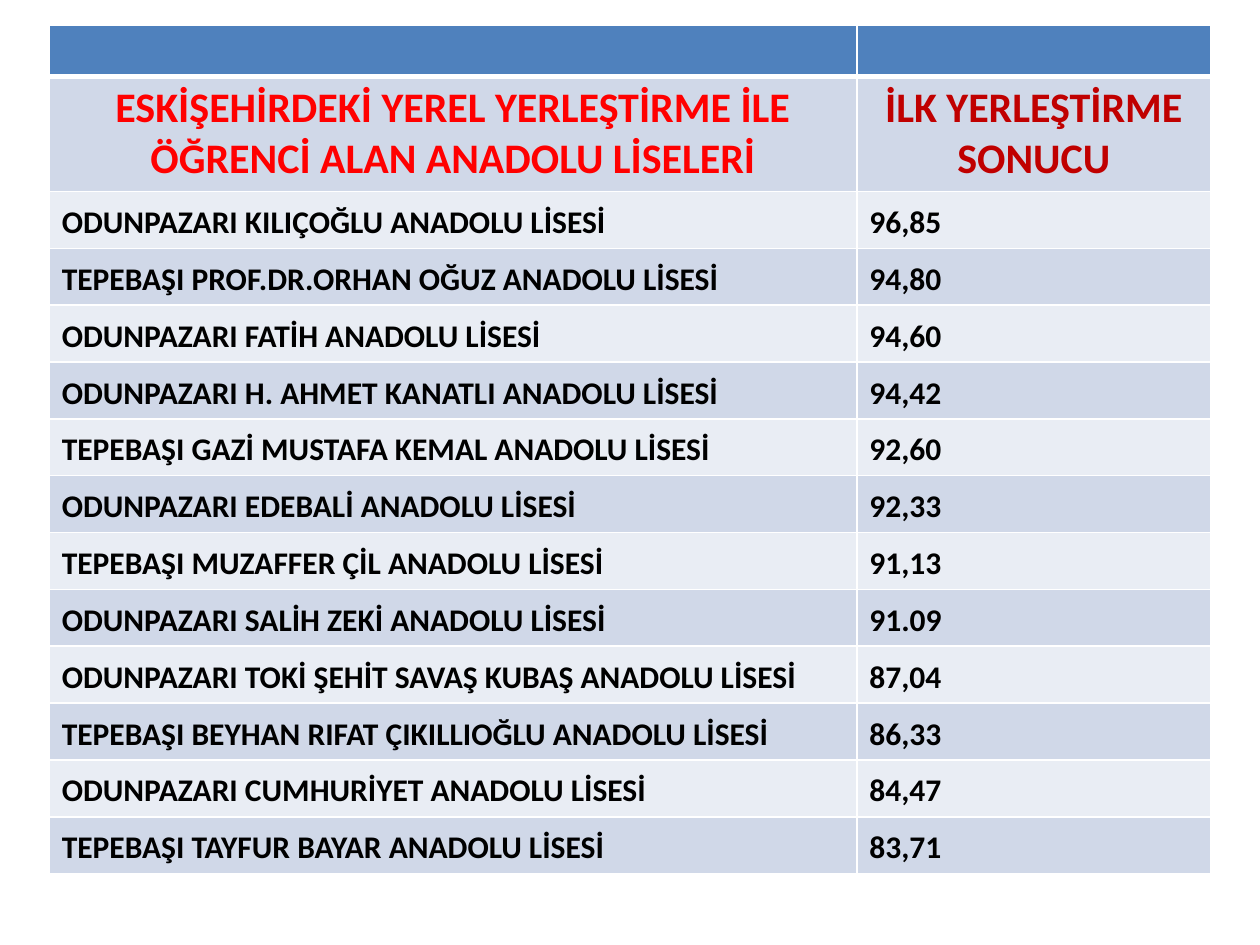
from lxml.etree import SubElement
from pptx import Presentation
from pptx.dml.color import RGBColor
from pptx.enum.text import PP_ALIGN as Align
from pptx.oxml.ns import qn
from pptx.util import Inches, Pt

HEADINGS = [
    ("ESKİŞEHİRDEKİ YEREL YERLEŞTİRME İLE ÖĞRENCİ ALAN ANADOLU LİSELERİ", "FF0000"),
    ("İLK YERLEŞTİRME SONUCU", "C00000"),
]
SCHOOLS = [
    ("ODUNPAZARI KILIÇOĞLU ANADOLU LİSESİ", "96,85"),
    ("TEPEBAŞI PROF.DR.ORHAN OĞUZ ANADOLU LİSESİ", "94,80"),
    ("ODUNPAZARI FATİH ANADOLU LİSESİ", "94,60"),
    ("ODUNPAZARI H. AHMET KANATLI ANADOLU LİSESİ", "94,42"),
    ("TEPEBAŞI GAZİ MUSTAFA KEMAL ANADOLU LİSESİ", "92,60"),
    ("ODUNPAZARI EDEBALİ ANADOLU LİSESİ", "92,33"),
    ("TEPEBAŞI MUZAFFER ÇİL ANADOLU LİSESİ", "91,13"),
    ("ODUNPAZARI SALİH ZEKİ ANADOLU LİSESİ", "91.09"),
    ("ODUNPAZARI TOKİ ŞEHİT SAVAŞ KUBAŞ ANADOLU LİSESİ", "87,04"),
    ("TEPEBAŞI BEYHAN RIFAT ÇIKILLIOĞLU ANADOLU LİSESİ", "86,33"),
    ("ODUNPAZARI CUMHURİYET ANADOLU LİSESİ", "84,47"),
    ("TEPEBAŞI TAYFUR BAYAR ANADOLU LİSESİ", "83,71"),
]
BANNER, BANDS = "4F81BD", ("E9EDF4", "D0D8E8")
LEFT, TOP = 0.39, 0.2
COLUMNS = [6.41, 2.81]
ROWS = [0.4, 0.91] + [0.45] * len(SCHOOLS)


def color(code):
    return RGBColor.from_string(code)


def style_cell(cell, fill, bottom=1):
    props = cell._tc.get_or_add_tcPr()
    for side, width in (("L", 1), ("R", 1), ("T", 1), ("B", bottom)):
        line = SubElement(props, qn(f"a:ln{side}"), w=str(Pt(width)))
        SubElement(SubElement(line, qn("a:solidFill")), qn("a:srgbClr"), val="FFFFFF")
    cell.fill.solid()
    cell.fill.fore_color.rgb = color(fill)


def write(cell, text, size, code):
    para = cell.text_frame.paragraphs[0]
    para.text = text
    font = para.font
    font.name, font.size, font.bold = "Calibri", Pt(size), True
    font.color.rgb = color(code)
    return para


deck = Presentation()
deck.slide_width, deck.slide_height = Inches(10), Inches(7.5)
page = deck.slides.add_slide(deck.slide_layouts[6])
table = page.shapes.add_table(
    len(ROWS), len(COLUMNS), Inches(LEFT), Inches(TOP),
    Inches(sum(COLUMNS)), Inches(sum(ROWS))).table
for column, width in zip(table.columns, COLUMNS):
    column.width = Inches(width)
for index, height in enumerate(ROWS):
    table.rows[index].height = Inches(height)
    for cell in table.rows[index].cells:
        if index == 0:
            style_cell(cell, BANNER, bottom=3)
        else:
            style_cell(cell, BANDS[index % 2])

for column, (heading, code) in enumerate(HEADINGS):
    write(table.cell(1, column), heading, 24, code).alignment = Align.CENTER
for row, school in enumerate(SCHOOLS, start=2):
    for column, text in enumerate(school):
        para = write(table.cell(row, column), text, 18, "000000")
        para.line_spacing = 1.15
        para.space_after = Pt(10)

deck.save("out.pptx")
